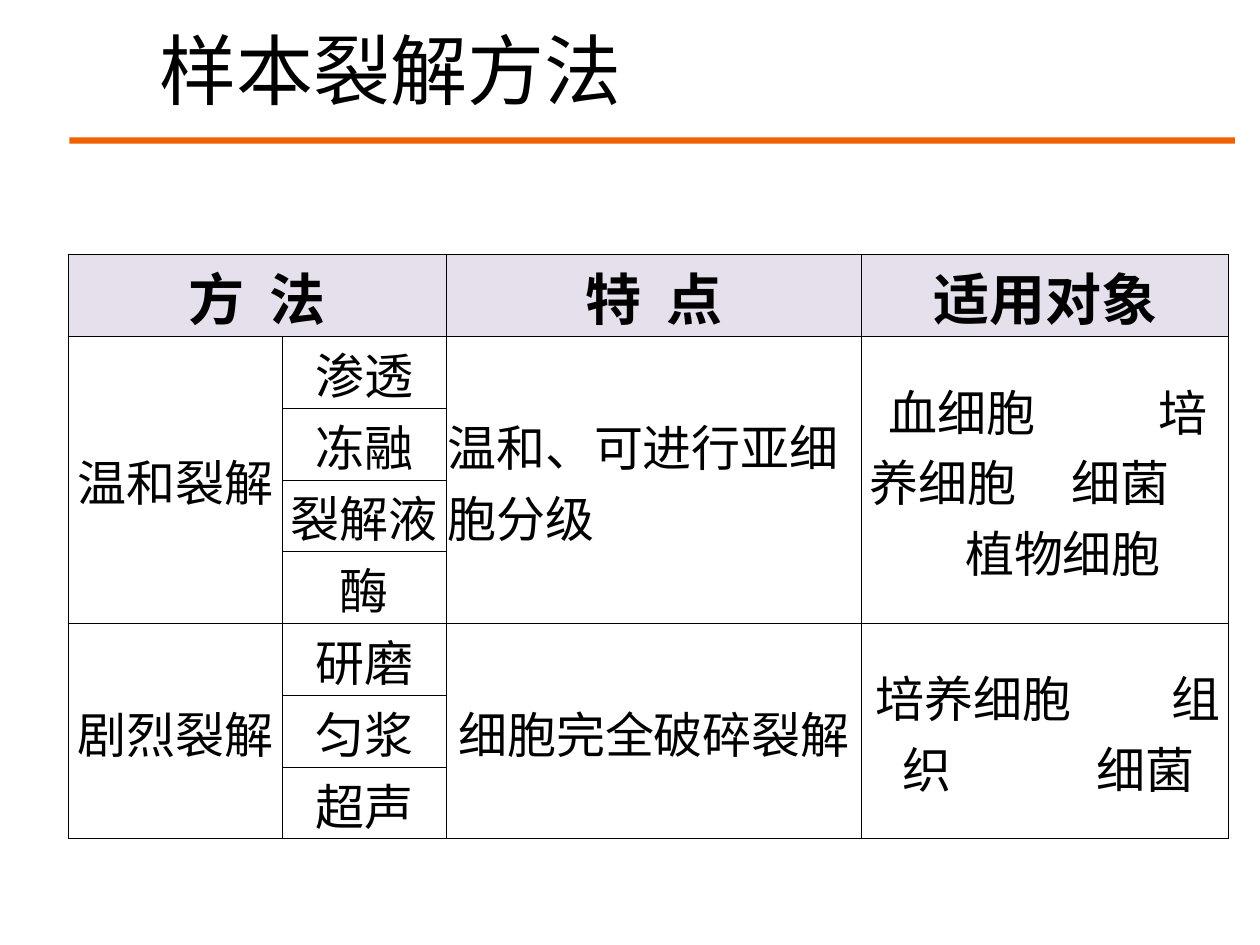
from dataclasses import dataclass
from itertools import zip_longest
from typing import Any

from lxml.etree import SubElement
from pptx import Presentation
from pptx.dml.color import RGBColor
from pptx.enum.shapes import MSO_SHAPE
from pptx.enum.text import MSO_ANCHOR, PP_ALIGN
from pptx.oxml.ns import qn
from pptx.util import Inches, Pt

BLACK = RGBColor(0, 0, 0)
ORANGE = RGBColor(0xEE, 0x60, 0x00)
LILAC = RGBColor(0xE6, 0xE0, 0xEC)
FONT = "Noto Sans CJK SC"
COLS = (1.7, 1.3, 3.3, 2.91)
STEPS = ("渗透", "冻融", "裂解液", "酶", "研磨", "匀浆", "超声")
ROWS = (0.65,) + (0.57,) * len(STEPS)
PAD = {
    "margin_left": Inches(0.01),
    "margin_right": Inches(0.01),
    "margin_top": Inches(0.01),
    "margin_bottom": 0,
    "vertical_anchor": MSO_ANCHOR.MIDDLE,
}
HEAD = {"size": Pt(32), "bold": True, "name": FONT}
BODY = {"size": Pt(28), "bold": False, "name": FONT}


@dataclass(frozen=True)
class Line:
    text: str
    gaps: tuple[float, ...] = ()
    align: PP_ALIGN = PP_ALIGN.CENTER
    margin: float = 0
    indent: float = 0


@dataclass(frozen=True)
class Box:
    row: int
    col: int
    lines: tuple[Line, ...]
    tall: int = 1
    wide: int = 1


def left(text: str, gaps: tuple[float, ...] = (),
         margin: float = 0, indent: float = 0) -> Line:
    return Line(text, gaps, PP_ALIGN.LEFT, margin, indent)


BOXES = (
    Box(0, 0, (Line("方 法", (7,)),), wide=2),
    Box(0, 2, (Line("特 点", (7,)),)),
    Box(0, 3, (Line("适用对象"),)),
    Box(1, 0, (Line("温和裂解"),), tall=4),
    Box(1, 2, (left("温和、可进行亚细胞分级"),), tall=4),
    Box(1, 3, (left("血细胞 培养细胞 细菌", (64, 25.6), 0.05, 0.15),
               left("植物细胞", margin=0.81)), tall=4),
    Box(5, 0, (Line("剧烈裂解"),), tall=3),
    Box(5, 2, (Line("细胞完全破碎裂解"),), tall=3),
    Box(5, 3, (left("培养细胞 组织 细菌", (51.2, 76.8), 0.31, -0.21),), tall=3),
    *(Box(row, 1, (Line(step),)) for row, step in enumerate(STEPS, 1)),
)


def apply(target: Any, style: dict[str, Any]) -> None:
    for key, value in style.items():
        setattr(target, key, value)


def add_rule(slide: Any) -> None:
    rule = slide.shapes.add_shape(
        MSO_SHAPE.RECTANGLE, Inches(0.55), Inches(1.09), Inches(9.25), Inches(0.05))
    rule.shadow.inherit = False
    rule.fill.solid()
    rule.fill.fore_color.rgb = ORANGE
    rule.line.fill.background()


def add_title(slide: Any) -> None:
    frame = slide.shapes.add_textbox(
        Inches(1.17), Inches(0.24), Inches(7.97), Inches(0.71)).text_frame
    apply(frame, {"word_wrap": True, "vertical_anchor": MSO_ANCHOR.MIDDLE})
    para = frame.paragraphs[0]
    para.line_spacing = 0.9
    run = para.add_run()
    run.text = "样本裂解方法"
    apply(run.font, {"size": Pt(44), "name": "Calibri"})
    run.font.color.rgb = BLACK


def add_edges(cell: Any) -> None:
    props = cell._tc.get_or_add_tcPr()
    for side in ("a:lnL", "a:lnR", "a:lnT", "a:lnB"):
        edge = SubElement(props, qn(side), w=str(Pt(0.5)))
        fill = SubElement(edge, qn("a:solidFill"))
        SubElement(fill, qn("a:srgbClr"), val=str(BLACK))


def add_run(para: Any, text: str, style: dict[str, Any], gap: float = 0) -> None:
    run = para.add_run()
    run.text = text
    apply(run.font, style)
    run.font.color.rgb = BLACK
    marks = run._r.get_or_add_rPr()
    SubElement(marks, qn("a:ea"), typeface=FONT)
    if gap:
        marks.set("spc", str(round(gap * 100)))


def write(para: Any, line: Line, style: dict[str, Any]) -> None:
    para.alignment = line.align
    if line.margin:
        props = para._p.get_or_add_pPr()
        props.set("marL", str(Inches(line.margin)))
        props.set("indent", str(Inches(line.indent)))
    for word, gap in zip_longest(line.text.split(" "), line.gaps):
        add_run(para, word, style)
        if gap:
            add_run(para, " ", style, gap)


def add_grid(slide: Any) -> None:
    grid = slide.shapes.add_table(
        len(ROWS), len(COLS), Inches(0.54), Inches(2.02),
        Inches(sum(COLS)), Inches(sum(ROWS))).table
    apply(grid, {"first_row": False, "horz_banding": False})
    for col, width in zip(grid.columns, COLS):
        col.width = Inches(width)
    for index, (row, height) in enumerate(zip(grid.rows, ROWS)):
        row.height = Inches(height)
        for cell in row.cells:
            apply(cell, PAD)
            add_edges(cell)
            if index == 0:
                cell.fill.solid()
                cell.fill.fore_color.rgb = LILAC
            else:
                cell.fill.background()
    for box in BOXES:
        cell = grid.cell(box.row, box.col)
        if box.tall > 1 or box.wide > 1:
            cell.merge(grid.cell(box.row + box.tall - 1, box.col + box.wide - 1))
        frame = cell.text_frame
        for index, line in enumerate(box.lines):
            para = frame.add_paragraph() if index else frame.paragraphs[0]
            write(para, line, BODY if box.row else HEAD)


def main() -> None:
    deck = Presentation()
    apply(deck, {"slide_width": Inches(10), "slide_height": Inches(7.5)})
    slide = deck.slides.add_slide(deck.slide_layouts[6])
    add_rule(slide)
    add_title(slide)
    add_grid(slide)
    deck.save("out.pptx")


if __name__ == "__main__":
    main()
